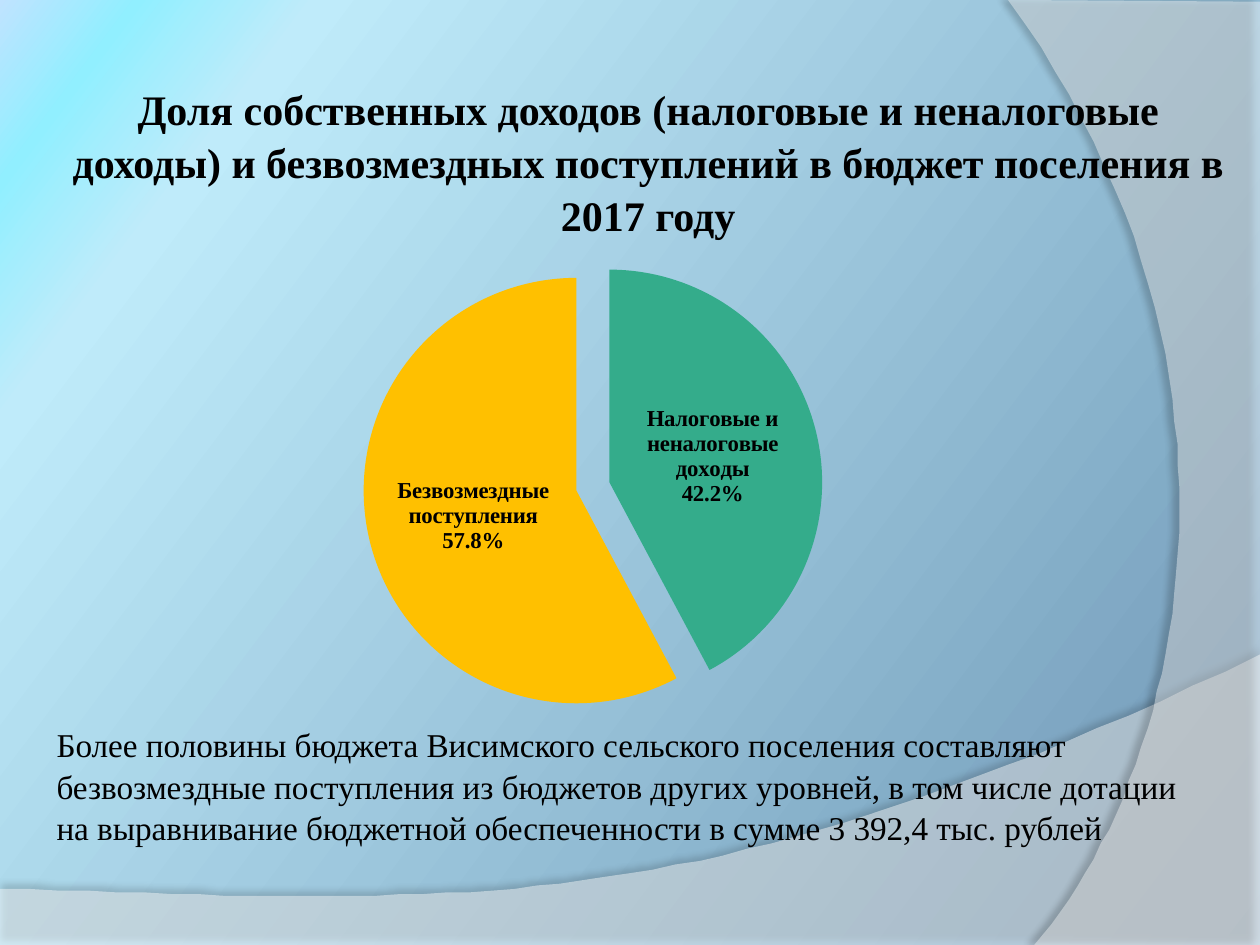
from copy import deepcopy

from lxml.etree import SubElement
from pptx import Presentation
from pptx.chart.data import CategoryChartData
from pptx.dml.color import RGBColor
from pptx.enum.chart import XL_CHART_TYPE as ChartType, XL_LABEL_POSITION as LabelPos
from pptx.enum.text import MSO_ANCHOR as Anchor, MSO_AUTO_SIZE as AutoSize, PP_ALIGN as Align
from pptx.oxml import parse_xml
from pptx.oxml.ns import nsdecls, qn
from pptx.util import Pt

# Content
TITLE = ("Доля собственных доходов (налоговые и неналоговые доходы) "
         "и безвозмездных поступлений в бюджет поселения в 2017 году")
COMMENT = ("Более половины бюджета Висимского сельского поселения составляют "
           "безвозмездные поступления из бюджетов других уровней, в том числе дотации "
           "на выравнивание бюджетной обеспеченности в сумме 3\u00a0392,4 тыс. рублей")
# category, percent, colour, explosion
SHARES = [
    ("Налоговые и неналоговые доходы", 42.2, "34AC8B", 2),
    ("Безвозмездные поступления", 57.8, "FFC000", 14),
]

# Formats and places, in points
SERIF = "Times New Roman"
TITLE_FONT = dict(name=SERIF, size=Pt(24), bold=True)
COMMENT_FONT = dict(name=SERIF, size=Pt(19), bold=False)
LABEL_FONT = dict(name=SERIF, size=Pt(13), bold=True)
TITLE_BOX = (36.7, 49, 667.4, 85)
COMMENT_BOX = (25.2, 409, 663.1, 76.3)
CHART_BOX = (82, 139.7, 538.6, 300.2)
PLOT_AREA = dict(x=0.07, y=0.05, w=0.84, h=0.81)

BACKGROUND = [(0, "6D95B4"), (84, "BFEBFA"), (93, "91EFFF"), (100, "BFE3FF")]
# corners, then the two handles and the end of the curve that closes the outline
SWOOSHES = [
    dict(corners=[(0, 507.6), (0, 540), (720, 540), (720, 374.4)],
         curve=[(402.5, 524.9), (281.5, 517.7), (0, 507.6)],
         alpha=45, shadow_alpha=35, distance=3.5, direction=270),
    dict(corners=[(720, 1.4), (720, 540), (591.1, 540)],
         curve=[(673.2, 445.7), (733, 216), (576, 0)],
         alpha=40, shadow_alpha=45, distance=4, direction=180),
]
CURVE_STEPS = 48


def color(hex_string):
    return RGBColor.from_string(hex_string)


def points(box):
    return [Pt(length) for length in box]


def format_font(font, values):
    for attribute, value in values.items():
        setattr(font, attribute, value)
    font.color.rgb = color("000000")


def bezier(start, first, second, end):
    for step in range(1, CURVE_STEPS + 1):
        t = step / CURVE_STEPS
        weights = ((1 - t) ** 3, 3 * t * (1 - t) ** 2, 3 * t * t * (1 - t), t ** 3)
        yield tuple(sum(w * p[axis] for w, p in zip(weights, (start, first, second, end)))
                    for axis in (0, 1))


def write_text(frame, text, font, **settings):
    for attribute, value in settings.items():
        setattr(frame, attribute, value)
    paragraph = frame.paragraphs[0]
    paragraph.line_spacing = 1.05
    run = paragraph.add_run()
    run.text = text
    format_font(run.font, font)
    return paragraph


def paint_background(slide):
    fill = slide.background.fill
    fill.gradient()
    fill.gradient_angle = 360 - 217
    stop_list = slide.element.find(".//" + qn("a:gsLst"))
    for _ in range(len(BACKGROUND) - len(stop_list)):
        stop_list.append(deepcopy(stop_list[0]))
    for stop, (position, hex_string) in zip(fill.gradient_stops, BACKGROUND):
        stop.position = position / 100
        stop.color.rgb = color(hex_string)


def add_swoosh(slide, corners, curve, alpha, shadow_alpha, distance, direction):
    outline = [*corners, *bezier(corners[-1], *curve)]
    builder = slide.shapes.build_freeform(*outline[0], scale=Pt(1))
    builder.add_line_segments(outline[1:], close=True)
    swoosh = builder.convert_to_shape()
    swoosh.fill.solid()
    swoosh.fill.fore_color.rgb = color("FFFFFF")
    swoosh.line.fill.background()
    properties = swoosh.element.spPr
    SubElement(properties.find(".//" + qn("a:srgbClr")), qn("a:alpha"), val=str(alpha * 1000))
    properties.append(parse_xml(
        f'<a:effectLst {nsdecls("a")}><a:outerShdw blurRad="{Pt(4)}" dist="{Pt(distance)}" '
        f'dir="{direction * 60000}" algn="ctr" rotWithShape="0"><a:srgbClr val="000000">'
        f'<a:alpha val="{shadow_alpha * 1000}"/></a:srgbClr></a:outerShdw></a:effectLst>'))


def add_share_chart(slide):
    data = CategoryChartData()
    data.categories = [share[0] for share in SHARES]
    data.add_series("Series 1", [share[1] for share in SHARES])
    chart = slide.shapes.add_chart(ChartType.PIE, *points(CHART_BOX), data).chart
    chart.has_legend = chart.has_title = False
    format_font(chart.font, dict(name="Arial", size=Pt(10)))

    # Slices
    plot = chart.plots[0]
    plot.vary_by_categories = True
    for index, (_, _, hex_string, explosion) in enumerate(SHARES):
        slice_format = plot.series[0].points[index].format
        slice_format.fill.solid()
        slice_format.fill.fore_color.rgb = color(hex_string)
        slice_format.line.fill.background()
    for slice_xml, share in zip(plot.series[0]._element.findall(qn("c:dPt")), SHARES):
        slice_xml.find(qn("c:spPr")).addprevious(
            parse_xml(f'<c:explosion {nsdecls("c")} val="{share[3]}"/>'))

    # Labels
    plot.has_data_labels = True
    labels = plot.data_labels
    label_format = dict(show_category_name=True, show_percentage=True, show_value=False,
                        number_format="0.0%", number_format_is_linked=False,
                        position=LabelPos.CENTER)
    for attribute, value in label_format.items():
        setattr(labels, attribute, value)
    format_font(labels.font, LABEL_FONT)
    labels._element.find(qn("c:showBubbleSize")).addnext(
        parse_xml(f'<c:separator {nsdecls("c")}>\n</c:separator>'))

    # Plot area
    area = chart._chartSpace.find(".//" + qn("c:plotArea"))
    for old_layout in area.findall(qn("c:layout")):
        area.remove(old_layout)
    modes = '<c:layoutTarget val="inner"/><c:xMode val="edge"/><c:yMode val="edge"/>'
    sizes = "".join(f'<c:{key} val="{value}"/>' for key, value in PLOT_AREA.items())
    area.insert(0, parse_xml(f'<c:layout {nsdecls("c")}><c:manualLayout>{modes}{sizes}'
                             '</c:manualLayout></c:layout>'))


def main():
    deck = Presentation()
    deck.slide_width, deck.slide_height = Pt(720), Pt(540)
    slide = deck.slides.add_slide(deck.slide_layouts[5])

    # Backdrop
    paint_background(slide)
    for swoosh in SWOOSHES:
        add_swoosh(slide, **swoosh)

    # Title, above the backdrop
    title = slide.shapes.title
    slide.shapes.element.append(title.element)
    title.left, title.top, title.width, title.height = points(TITLE_BOX)
    margins = {f"margin_{side}": Pt(3.6) for side in ("left", "top", "right", "bottom")}
    heading = write_text(title.text_frame, TITLE, TITLE_FONT, word_wrap=True,
                         auto_size=AutoSize.NONE, vertical_anchor=Anchor.MIDDLE, **margins)
    heading.alignment = Align.CENTER

    # Chart and comment
    add_share_chart(slide)
    comment = slide.shapes.add_textbox(*points(COMMENT_BOX))
    write_text(comment.text_frame, COMMENT, COMMENT_FONT, word_wrap=True,
               auto_size=AutoSize.SHAPE_TO_FIT_TEXT)

    deck.save("out.pptx")


if __name__ == "__main__":
    main()
